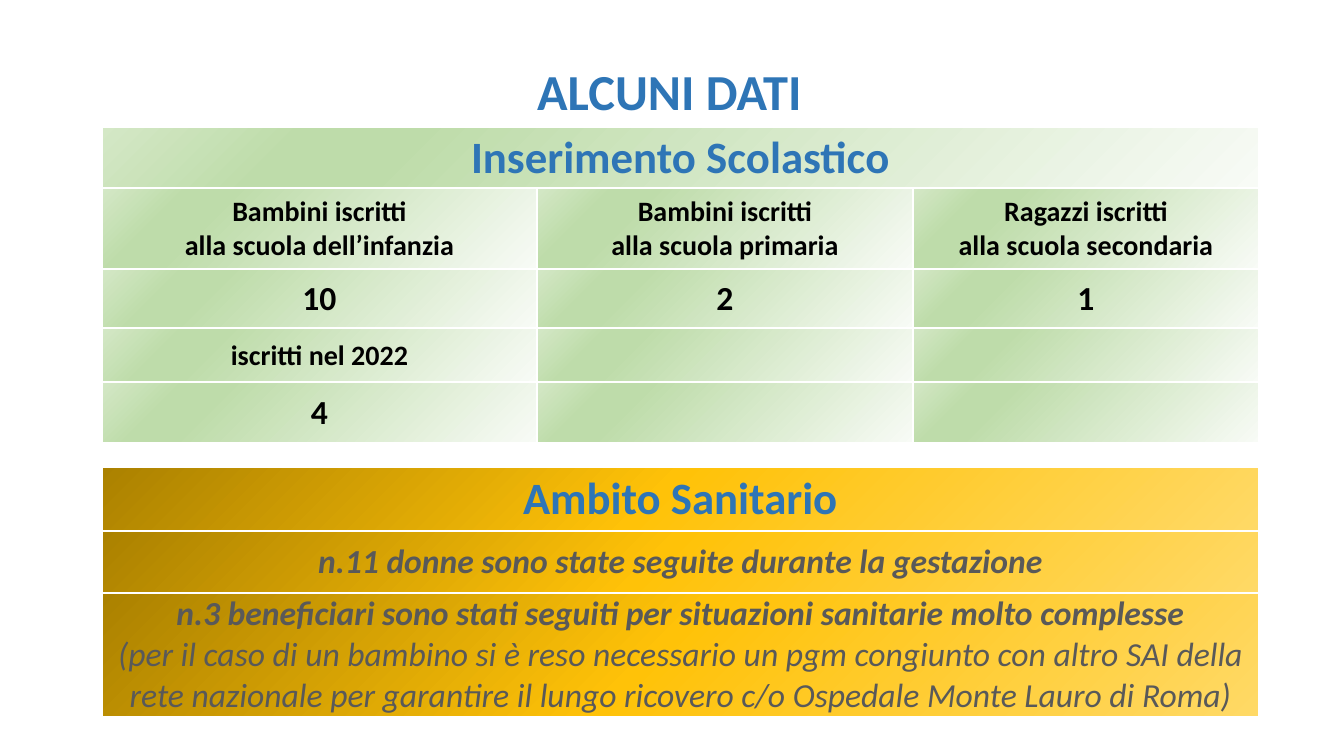
"""Build the "ALCUNI DATI" slide with its school and health tables."""
from lxml import etree
from pptx import Presentation
from pptx import util as u
from pptx.dml.color import RGBColor
from pptx.enum import text
from pptx.oxml import ns

PX = 9071
BLUE, BLACK, GREY = "2E75B6", "000000", "595959"
GREEN_STOPS = [(0, "F8FBF6"), (74, "BEDCAA"), (83, "BEDCAA"), (100, "D4E8C6")]
GREEN_PATH = ("path", {"path": "circle"})
GOLD_STOPS = [(0, "AB8100"), (48, "FFC208"), (100, "FFD966")]
GOLD_LINE = ("lin", {"ang": "2700000", "scaled": "0"})


def write(tf, line, size=24, color=BLACK, bold=True, italic=False, spacing=None):
    p = tf.add_paragraph() if tf.text else tf.paragraphs[0]
    p.alignment = text.PP_ALIGN.CENTER
    p.line_spacing = spacing
    r = p.add_run()
    r.text = line
    r.font.name = "Calibri"
    r.font.size = u.Pt(size)
    r.font.bold = bold
    r.font.italic = italic
    r.font.color.rgb = RGBColor.from_string(color)


def add_table(s, top, widths, heights, stops, shade):
    frame = s.shapes.add_table(len(heights), len(widths), 102 * PX, top * PX,
                               sum(widths) * PX, sum(heights) * PX)
    table = frame.table
    table.first_row = table.horz_banding = False
    for column, width in zip(table.columns, widths):
        column.width = width * PX
    for row, height in zip(table.rows, heights):
        row.height = height * PX
    for cell in table.iter_cells():
        cell.vertical_anchor = text.MSO_ANCHOR.MIDDLE
        cell.margin_left = cell.margin_right = cell.margin_top = PX
        cell.margin_bottom = 0
        pr = cell._tc.get_or_add_tcPr()
        for side in ("lnL", "lnR", "lnT", "lnB"):
            ln = etree.SubElement(pr, ns.qn("a:" + side), w="12700")
            solid = etree.SubElement(ln, ns.qn("a:solidFill"))
            etree.SubElement(solid, ns.qn("a:srgbClr"), val="FFFFFF")
        grad = etree.SubElement(pr, ns.qn("a:gradFill"), rotWithShape="1")
        gs_list = etree.SubElement(grad, ns.qn("a:gsLst"))
        for pos, color in stops:
            gs = etree.SubElement(gs_list, ns.qn("a:gs"), pos=str(pos * 1000))
            etree.SubElement(gs, ns.qn("a:srgbClr"), val=color)
        tag, attrs = shade
        direction = etree.SubElement(grad, ns.qn("a:" + tag), attrs)
        if tag == "path":
            etree.SubElement(direction, ns.qn("a:fillToRect"), l="100000", t="100000")
    return table


prs = Presentation()
prs.slide_width, prs.slide_height = 1344 * PX, 756 * PX
s = prs.slides.add_slide(prs.slide_layouts[5])

title = s.shapes.title
title.left, title.top, title.width, title.height = 58 * PX, 61 * PX, 1223 * PX, 67 * PX
title.text_frame.vertical_anchor = text.MSO_ANCHOR.MIDDLE
write(title.text_frame, "ALCUNI DATI", size=36, color=BLUE, spacing=0.9)

school = add_table(s, 127, [435, 376, 346], [61, 81, 59, 54, 61], GREEN_STOPS, GREEN_PATH)
school.cell(0, 0).merge(school.cell(0, 2))
write(school.cell(0, 0).text_frame, "Inserimento Scolastico", size=32, color=BLUE)
enrolled = [
    ("Bambini iscritti", "alla scuola dell’infanzia", "10"),
    ("Bambini iscritti", "alla scuola primaria", "2"),
    ("Ragazzi iscritti", "alla scuola secondaria", "1"),
]
for col, (who, where, count) in enumerate(enrolled):
    for line in (who, where):
        write(school.cell(1, col).text_frame, line, size=20)
    write(school.cell(2, col).text_frame, count)
write(school.cell(3, 0).text_frame, "iscritti nel 2022", size=20)
write(school.cell(4, 0).text_frame, "4")

health = add_table(s, 467, [1157], [64, 62, 123], GOLD_STOPS, GOLD_LINE)
write(health.cell(0, 0).text_frame, "Ambito Sanitario", size=32, color=BLUE)
facts = [
    (1, "n.11 donne sono state seguite durante la gestazione", True),
    (2, "n.3 beneficiari sono stati seguiti per situazioni sanitarie molto complesse", True),
    (2, "(per il caso di un bambino si è reso necessario un pgm congiunto con altro SAI della "
        "rete nazionale per garantire il lungo ricovero c/o Ospedale Monte Lauro di Roma)", False),
]
for row, line, bold in facts:
    write(health.cell(row, 0).text_frame, line, color=GREY, bold=bold, italic=True)

prs.save("out.pptx")
